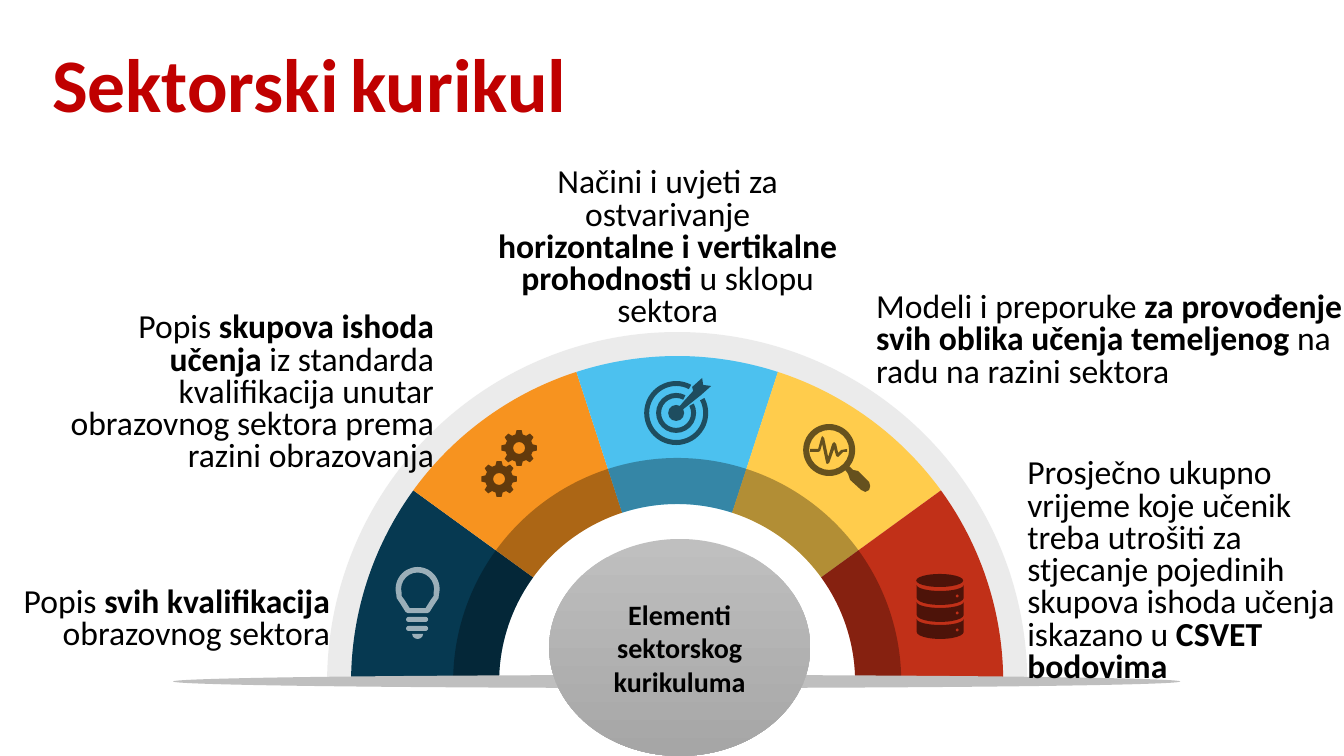
from itertools import pairwise
from math import cos, radians, sin

from lxml.etree import Element, SubElement
from pptx import Presentation
from pptx.dml.color import RGBColor
from pptx.enum.shapes import MSO_SHAPE
from pptx.enum.text import MSO_ANCHOR, MSO_AUTO_SIZE, PP_ALIGN
from pptx.oxml.ns import qn
from pptx.util import Inches, Pt

PX = 914400 / 100.8
FINE = 100
FONT = "Calibri"
BLACK, WHITE, RED = "000000", "FFFFFF", "C00000"

TITLE = [("Sektorski", RED, 54, True), (" ", BLACK, 36, False), ("kurikul", RED, 54, True)]
TITLE_AREA = (42, -12, 1158, 145)
HUB_TEXT = "Elementi sektorskog kurikuluma"
HUB_AREA = (549, 539, 261, 217)
FLOOR_AREA = (173, 675, 1007, 13)

LABELS = [
    ((1027, 454, 320, 236), PP_ALIGN.LEFT,
     ["Prosječno ukupno vrijeme koje učenik treba utrošiti za stjecanje pojedinih "
      "skupova ishoda učenja iskazano u ", "CSVET bodovima"]),
    ((22, 583, 308, 75), PP_ALIGN.RIGHT,
     ["Popis ", "svih kvalifikacija ", "obrazovnog sektora"]),
    ((876, 288, 471, 107), PP_ALIGN.LEFT,
     ["Modeli i preporuke ", "za provođenje svih oblika učenja temeljenog ",
      "na radu na razini sektora"]),
    ((42, 308, 392, 171), PP_ALIGN.RIGHT,
     ["Popis ", "skupova ishoda učenja ",
      "iz standarda kvalifikacija unutar obrazovnog sektora prema razini obrazovanja"]),
    ((494, 163, 347, 171), PP_ALIGN.CENTER,
     ["Načini i uvjeti za ostvarivanje ", "horizontalne i vertikalne prohodnosti ",
      "u sklopu sektora"]),
]

ARCH_CENTER = (677, 682)
HALO, RIM, SHADE_RIM, BORE = 350, 326, 224, 178
SEGMENT_COLORS = ["063951", "F7931F", "4CC1EF", "FFCC4C", "C13018"]

GEARS = [(519, 448), (499, 479)]
TARGET = (676, 413)
TARGET_RINGS = [(32, 27), (20, 15)]
TARGET_GAP = (62, 388)
DART = [(701, 395), (711, 386), (703, 385), (702, 378), (692, 387), (693, 391), (683, 402)]
DART = DART[::-1]
LENS = (829, 450)
LENS_HANDLE = [(848, 474), (850, 480), (861, 490), (865, 492), (869, 490), (870, 486),
               (869, 482), (858, 471), (853, 470), (849, 466)]
PULSE = [(847, 449), (841, 450), (838, 453), (836, 444), (834, 442), (832, 444), (828, 457),
         (824, 438), (822, 436), (821, 438), (818, 449), (810, 449), (810, 452), (818, 452),
         (820, 451), (822, 444), (826, 463), (827, 464), (829, 463), (834, 449), (836, 456),
         (838, 457), (843, 452), (847, 452)]
DISK_CENTER, DISK_TOP, DISK_PITCH = 940, 585, 17
BULB = (417.5, 589)
BULB_OUTER = [(21, 9), (17, 15), (12, 23), (10, 24)]
BULB_INNER = [(16, 7), (13, 11), (8, 19)]


def color(value):
    return RGBColor.from_string(value)


def area(box):
    return [round(length * PX) for length in box]


def arc(center, radius, start=0, stop=360, height=None):
    height = radius if height is None else height
    low, high = sorted((start, stop))
    quarters = [angle for angle in range(-360, 721, 90) if low < angle < high]
    stations = sorted([start, *quarters, stop], reverse=start > stop)
    places = [(center[0] + radius * cos(radians(angle)), center[1] - height * sin(radians(angle)))
              for angle in stations]
    curves = [(*place, (radius, height, first, last))
              for place, (first, last) in zip(places[1:], pairwise(stations))]
    return [places[0], *curves]


def band(center, outer, inner, start, stop):
    return arc(center, outer, start, stop) + arc(center, inner, stop, start)


def bend(line, radius, height, first, last):
    curve = Element(qn("a:arcTo"))
    curve.set("wR", str(round(radius * FINE)))
    curve.set("hR", str(round(height * FINE)))
    curve.set("stAng", str(round(-first % 360 * 60000)))
    curve.set("swAng", str(round((first - last) * 60000)))
    line.getparent().replace(line, curve)


def paint(shape, fill, opacity=100):
    shape.shadow.inherit = False
    shape.line.fill.background()
    shape.fill.solid()
    shape.fill.fore_color.rgb = color(fill)
    if opacity < 100:
        tint = shape.fill._xPr.find(qn("a:solidFill"))[0]
        SubElement(tint, qn("a:alpha")).set("val", str(opacity * 1000))


def outline(slide, contours, fill, opacity=100):
    fine = [[(vertex[0] * FINE, vertex[1] * FINE) for vertex in contour] for contour in contours]
    builder = slide.shapes.build_freeform(*fine[0][0], scale=PX / FINE)
    builder.add_line_segments(fine[0][1:], close=True)
    for hole in fine[1:]:
        builder.move_to(*hole[0])
        builder.add_line_segments(hole[1:], close=True)
    shape = builder.convert_to_shape()
    vertices = [vertex for contour in contours for vertex in contour[1:]]
    lines = list(shape._element.iter(qn("a:lnTo")))
    for line, vertex in zip(lines, vertices):
        if len(vertex) == 3:
            bend(line, *vertex[2])
    paint(shape, fill, opacity)


def preset(slide, kind, box, fill, opacity=100):
    shape = slide.shapes.add_shape(kind, *area(box))
    paint(shape, fill, opacity)
    return shape


def write(shape, spans, align=PP_ALIGN.LEFT, anchor=MSO_ANCHOR.TOP, spacing=1.0, side=0.1):
    frame = shape.text_frame
    frame.word_wrap = True
    frame.auto_size = MSO_AUTO_SIZE.NONE
    frame.vertical_anchor = anchor
    frame.margin_left = frame.margin_right = Inches(side)
    frame.margin_top = frame.margin_bottom = Inches(0.05)
    para = frame.paragraphs[0]
    para.alignment = align
    para.line_spacing = spacing
    for text, tone, size, bold in spans:
        span = para.add_run()
        span.text = text
        span.font.name = FONT
        span.font.size = Pt(size)
        span.font.bold = bold
        span.font.color.rgb = color(tone)


def draw_arch(slide):
    outline(slide, [band(ARCH_CENTER, HALO, SHADE_RIM, 180, 0)], "D9D9D9", 50)
    sweep = 180 // len(SEGMENT_COLORS)
    for index, fill in enumerate(SEGMENT_COLORS):
        start = 180 - index * sweep
        outline(slide, [band(ARCH_CENTER, RIM, BORE, start, start - sweep)], fill)
    outline(slide, [band(ARCH_CENTER, SHADE_RIM, BORE, 180, 0)], BLACK, 30)
    preset(slide, MSO_SHAPE.OVAL, FLOOR_AREA, "BFBFBF")
    hub = preset(slide, MSO_SHAPE.OVAL, HUB_AREA, "BFBFBF")
    hub.fill.gradient()
    hub.fill.gradient_angle = 270
    for stop, tone in zip(hub.fill.gradient_stops, ["BFBFBF", "A6A6A6"]):
        stop.color.rgb = color(tone)
    write(hub, [(HUB_TEXT, BLACK, 20, True)], align=PP_ALIGN.CENTER, anchor=MSO_ANCHOR.MIDDLE)


def draw_gear(slide, center):
    teeth = []
    for tooth in range(8):
        for offset, radius in [(-15, 14), (-8, 18), (8, 18), (15, 14)]:
            angle = radians(tooth * 45 + offset)
            teeth.append((center[0] + radius * cos(angle), center[1] + radius * sin(angle)))
    outline(slide, [teeth, arc(center, 6)], BLACK, 60)


def draw_target(slide):
    outline(slide, [arc(TARGET, 8, *TARGET_GAP) + DART[::-1]], BLACK, 60)
    for outer, inner in TARGET_RINGS:
        outline(slide, [band(TARGET, outer, inner, *TARGET_GAP)], BLACK, 60)


def draw_lens(slide):
    rim = arc(LENS, 26, 309, -38)
    outline(slide, [rim + LENS_HANDLE[::-1], arc(LENS, 20)], BLACK, 60)
    outline(slide, [PULSE], BLACK, 60)


def draw_disks(slide):
    preset(slide, MSO_SHAPE.OVAL, (916, 574, 47, 13), BLACK, 60)
    for layer in range(3):
        top = DISK_TOP + layer * DISK_PITCH
        upper = arc((DISK_CENTER, top), 23.5, 180, 360, 6)
        lower = arc((DISK_CENTER, top + 13), 23.5, 360, 180, 7)
        outline(slide, [upper + lower, arc((957, top + 11), 1.5)], BLACK, 60)


def bulb_contour(radius, right_side):
    x, y = BULB
    right = [(x + across, y + down) for across, down in right_side]
    left = [(x - across, y + down) for across, down in right_side]
    return arc(BULB, radius, -15, 195) + left + right[::-1]


def draw_bulb(slide):
    for top in (617, 626):
        bar = preset(slide, MSO_SHAPE.ROUNDED_RECTANGLE, (406, top, 22, 5), WHITE, 60)
        bar.adjustments[0] = 0.5
    outline(slide, [arc((BULB[0], 634), 5.5, 180, 360, 5)], WHITE, 60)
    outline(slide, [bulb_contour(22, BULB_OUTER), bulb_contour(16.5, BULB_INNER)], WHITE, 60)


def main():
    deck = Presentation()
    deck.slide_width, deck.slide_height = Inches(13.33), Inches(7.5)
    slide = deck.slides.add_slide(deck.slide_layouts[5])
    title = slide.shapes.title
    title.left, title.top, title.width, title.height = area(TITLE_AREA)
    write(title, TITLE, anchor=MSO_ANCHOR.BOTTOM, spacing=Pt(40))
    draw_arch(slide)
    for box, align, texts in LABELS:
        label = slide.shapes.add_textbox(*area(box))
        spans = [(text, BLACK, 24, index % 2 == 1) for index, text in enumerate(texts)]
        write(label, spans, align=align, spacing=0.8, side=0)
    for center in GEARS:
        draw_gear(slide, center)
    draw_target(slide)
    draw_lens(slide)
    draw_disks(slide)
    draw_bulb(slide)
    deck.save("out.pptx")


if __name__ == "__main__":
    main()
